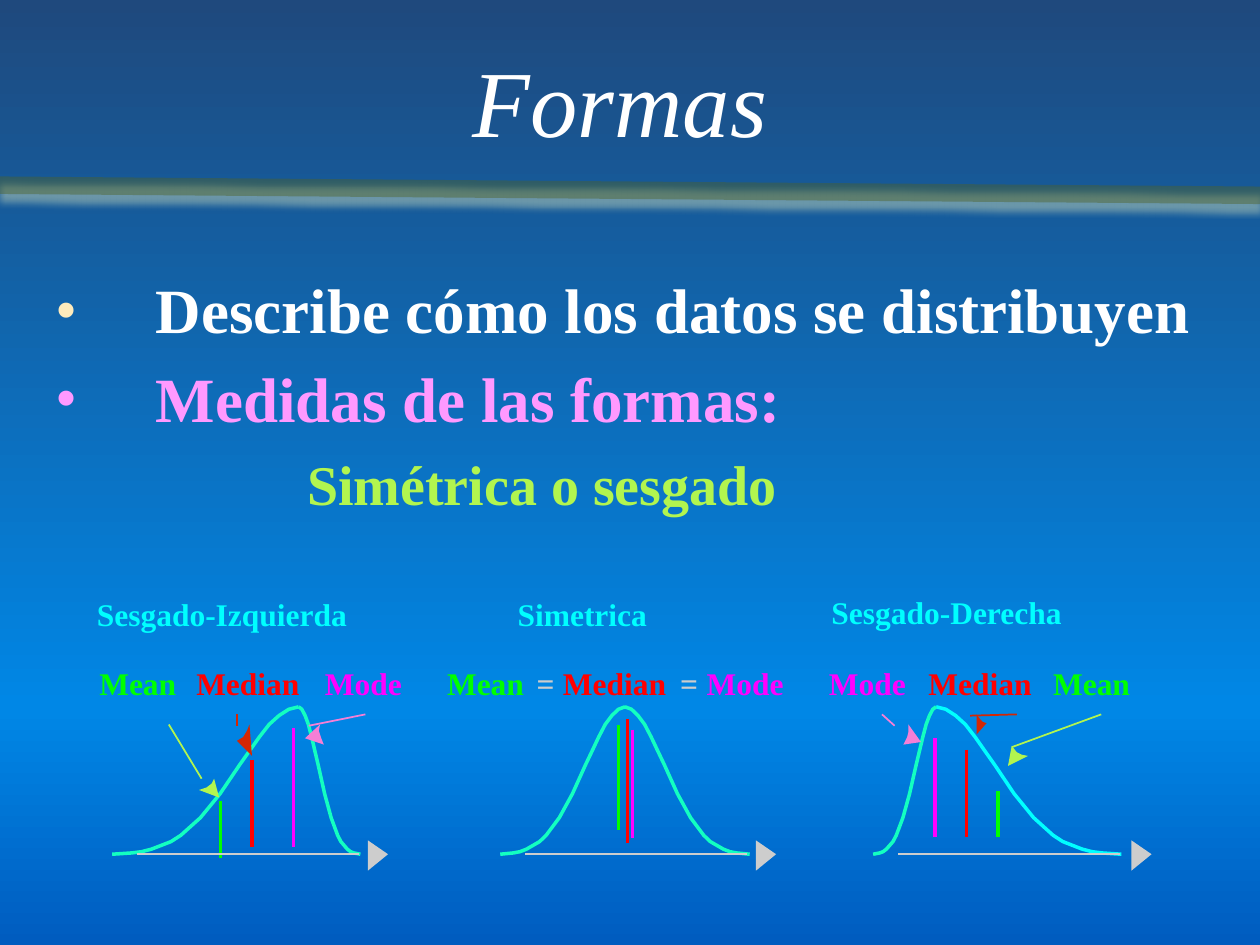
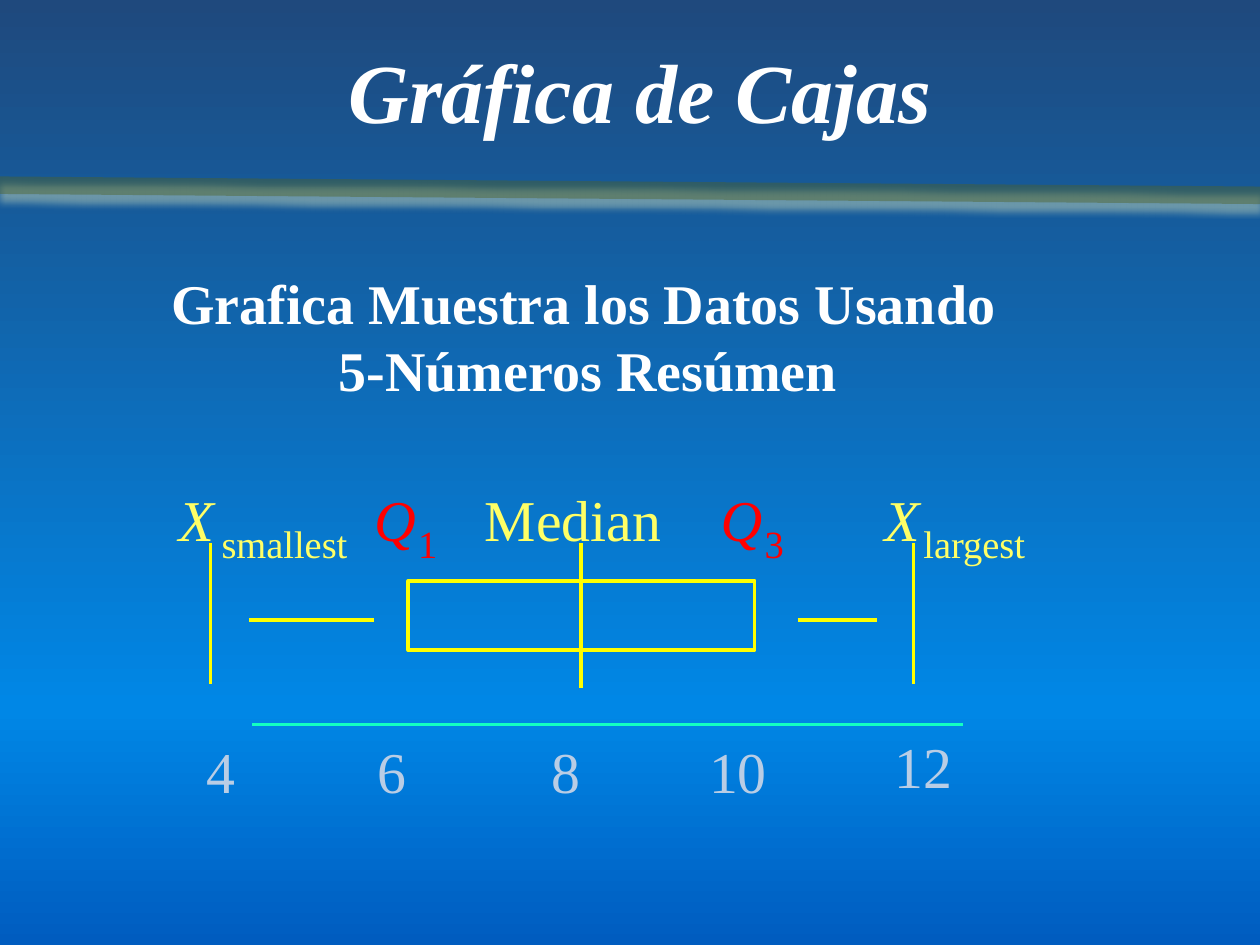
"""Builds two slides on distribution shapes and box plots."""
from lxml import etree
from pptx import Presentation
from pptx import util as u
from pptx.dml import color
from pptx.enum import shapes, text
from pptx.oxml import ns

INK = {
    "white": "FFFFFF", "cream": "FEEBBC", "pink": "FF99FF", "lime": "B2F54F",
    "aqua": "13FFC1", "cyan": "00FFFF", "grey": "CDCDCD", "green": "00FF00",
    "red": "FF0000", "mauve": "FF00FF", "rust": "D42704", "rose": "F57FD6",
    "yellow": "FFFF00", "lemon": "FFFF66", "pale": "B9CDE5",
    "band": "4F6228", "glow": "D7E4BD",
    "navy": "1F497D", "sky": "0087E6", "deep": "005CBF",
}
FONT = "Times New Roman"
WIDE = {"Mean": 0.84, "Median": 1.06, "Mode": 0.82, "=": 0.41}
HUE = {"Mean": "green", "Median": "red", "Mode": "mauve", "=": "grey"}
STEPS = (0, 2, 3, 4, 5, 6, 7, 9, 11, 13, 14, 15, 16, 17, 18, 19)
RISE = (6.78, 6.77, 6.76, 6.74, 6.71, 6.68, 6.63, 6.49,
        6.3, 6.07, 5.96, 5.85, 5.75, 5.68, 5.63, 5.61)


def rgb(name):
    return color.RGBColor.from_string(INK[name])


def node(root, tag, **atts):
    return etree.SubElement(root, ns.qn("a:" + tag),
                            {key: str(val) for key, val in atts.items()})


class Deck:
    def __init__(self):
        self.prs = Presentation()
        self.prs.slide_width = u.Inches(10)
        self.prs.slide_height = u.Inches(7.5)
        self.slide = None
        self.ground()

    def ground(self):
        fill = self.prs.slide_master.background.fill
        fill.gradient()
        fill.gradient_angle = 270
        root = self.prs.slide_master.element.find(".//" + ns.qn("a:gsLst"))
        for old in list(root):
            root.remove(old)
        for pos, name in ((0, "navy"), (75, "sky"), (100, "deep")):
            node(node(root, "gs", pos=pos * 1000), "srgbClr", val=INK[name])

    def page(self, title, left, top, size, bold=False):
        self.slide = self.prs.slides.add_slide(self.prs.slide_layouts[5])
        self.band()
        box = self.slide.shapes.title
        box.left, box.top = u.Inches(left), u.Inches(top)
        box.width, box.height = u.Inches(8.5), u.Inches(1.25)
        frame = box.text_frame
        frame.vertical_anchor = text.MSO_ANCHOR.MIDDLE
        para = frame.paragraphs[0]
        para.alignment = text.PP_ALIGN.CENTER
        para.line_spacing = 0.95
        self.run(para, title, size, "white", bold, True)

    def band(self):
        line = self.line((0, 1.47), (10, 1.55), "band", 10)
        paint = line.line._ln.find(".//" + ns.qn("a:srgbClr"))
        node(paint, "alpha", val=44000)
        glow = node(line._element.spPr.find(ns.qn("a:effectLst")), "outerShdw",
                    blurRad=u.Pt(4), dist=u.Pt(4), dir=5400000,
                    algn="ctr", rotWithShape=0)
        node(glow, "srgbClr", val=INK["glow"])

    def run(self, para, words, size, hue, bold=False, slant=False):
        run = para.add_run()
        run.text = words
        font = run.font
        font.name, font.size = FONT, u.Pt(size)
        font.bold, font.italic = bold, slant
        font.color.rgb = rgb(hue)

    def line(self, start, end, hue, width=2):
        ends = [u.Inches(val) for val in (*start, *end)]
        line = self.slide.shapes.add_connector(
            shapes.MSO_CONNECTOR.STRAIGHT, *ends)
        line.line.color.rgb = rgb(hue)
        line.line.width = u.Pt(width)
        node(line._element.spPr, "effectLst")
        return line

    def free(self, points, hue, solid=False):
        spots = [(u.Inches(x), u.Inches(y)) for x, y in points]
        pen = self.slide.shapes.build_freeform(*spots[0])
        pen.add_line_segments(spots[1:], close=solid)
        shape = pen.convert_to_shape()
        if solid:
            shape.shadow.inherit = False
            shape.fill.solid()
            shape.fill.fore_color.rgb = rgb(hue)
            shape.line.fill.background()
        else:
            self.hollow(shape, hue)

    def hollow(self, shape, hue):
        shape.shadow.inherit = False
        shape.fill.background()
        shape.line.color.rgb = rgb(hue)
        shape.line.width = u.Pt(2)

    def frame(self, left, top, width, height, hue):
        area = [u.Inches(val) for val in (left, top, width, height)]
        self.hollow(self.slide.shapes.add_shape(
            shapes.MSO_SHAPE.RECTANGLE, *area), hue)

    def label(self, words, left, top, width, size, hue, bold=False, slant=False):
        high = size * 0.0162 + 0.11
        box = self.slide.shapes.add_textbox(
            *[u.Inches(val) for val in (left, top, width, high)])
        box.text_frame.word_wrap = False
        box.text_frame.auto_size = text.MSO_AUTO_SIZE.SHAPE_TO_FIT_TEXT
        self.run(box.text_frame.paragraphs[0], words, size, hue, bold, slant)

    def body(self, area, rows):
        box = self.slide.shapes.add_textbox(*[u.Inches(val) for val in area])
        frame = box.text_frame
        frame.word_wrap = True
        for num, (words, size, hue, space, gap, inset, dot) in enumerate(rows):
            para = frame.add_paragraph() if num else frame.paragraphs[0]
            para.line_spacing = space
            para.space_before = u.Pt(0)
            props = para._p.get_or_add_pPr()
            before = props.find(ns.qn("a:spcBef"))
            before.remove(before[0])
            node(before, "spcPct", val=gap * 1000)
            props.set("marL", str(u.Inches(inset)))
            props.set("indent", str(-u.Inches(0.8) if dot else 0))
            if dot:
                node(node(props, "buClr"), "srgbClr", val=INK[dot])
                node(props, "buFont", typeface=FONT)
                node(props, "buChar", char="•")
            else:
                node(props, "buNone")
            self.run(para, words, size, hue, True)

    def curve(self, foot, peak, hue="aqua"):
        self.free([(foot + (peak - foot) * step / 19, y)
                   for step, y in zip(STEPS, RISE)], hue)

    def axis(self, left, tip):
        self.line((left, 6.78), (left + 1.76, 6.78), "grey", 1)
        self.free([(tip - 0.16, 6.67), (tip, 6.78), (tip - 0.16, 6.91)],
                  "grey", True)

    def arrow(self, start, end, head, hue):
        self.line(start, end, hue, 1)
        self.free(head, hue, True)


def forms(deck):
    deck.page("Formas", 0.67, 0.21, 54)
    deck.body((0.33, 2.17, 9.67, 2.17), (
        ("Describe cómo los datos se distribuyen", 36, "white", 0.9, 20, 0.81, "cream"),
        ("Medidas de las formas:", 36, "pink", 0.9, 33, 0.81, "pink"),
        ("Simétrica o sesgado", 32, "lime", 0.9, 36, 2.01, None)))

    for left, peak, right in ((0.89, 2.37, 2.86), (3.97, 4.96, 5.95),
                              (6.93, 7.43, 8.9)):
        deck.curve(right, peak, "cyan" if right == 8.9 else "aqua")
        deck.curve(left, peak)

    for words, left, top, width in (("Sesgado-Izquierda", 0.67, 4.67, 2.21),
                                    ("Simetrica", 4.01, 4.67, 1.24),
                                    ("Sesgado-Derecha", 6.5, 4.66, 2.05)):
        deck.label(words, left, top, width, 18, "cyan", True)

    for words, left in (("Mean", 0.69), ("Median", 1.46), ("Mode", 2.48),
                        ("Mean", 3.45), ("=", 4.16), ("Median", 4.37),
                        ("=", 5.3), ("Mode", 5.51),
                        ("Mode", 6.48), ("Median", 7.27), ("Mean", 8.26)):
        deck.label(words, left, 5.22, WIDE[words], 18, HUE[words], True)

    for name, x, top, low in (("Mode", 7.42, 5.86, 6.64), ("Median", 7.67, 5.95, 6.64),
                              ("Mean", 7.92, 6.28, 6.64), ("Mode", 2.33, 5.78, 6.72),
                              ("Median", 2, 6.03, 6.72), ("Mean", 1.75, 6.36, 6.81),
                              ("Median", 4.98, 5.71, 6.69), ("Mean", 4.91, 5.75, 6.59),
                              ("Mode", 5.02, 5.79, 6.65)):
        deck.line((x, top), (x, low), HUE[name])

    for arrow in (
            ((8.74, 5.67), (8.03, 5.93),
             ((8.16, 6), (8, 6.08), (8.03, 5.92), (8.07, 5.97), (8.11, 5.99)), "lime"),
            ((8.07, 5.67), (7.7, 5.68),
             ((7.83, 5.74), (7.75, 5.83), (7.75, 5.67), (7.78, 5.71), (7.8, 5.73)), "rust"),
            ((1.88, 5.67), (1.88, 5.76),
             ((1.98, 5.75), (2, 6), (1.88, 5.88), (1.93, 5.85), (1.96, 5.8)), "rust"),
            ((1.34, 5.75), (1.6, 6.18),
             ((1.7, 6.18), (1.74, 6.33), (1.58, 6.27), (1.64, 6.25), (1.68, 6.22)), "lime"),
            ((7, 5.67), (7.1, 5.76),
             ((7.21, 5.75), (7.31, 5.89), (7.17, 5.91), (7.2, 5.85), (7.21, 5.81)), "rose"),
            ((2.9, 5.67), (2.45, 5.76),
             ((2.57, 5.91), (2.42, 5.86), (2.54, 5.75), (2.53, 5.8), (2.55, 5.86)), "rose")):
        deck.arrow(*arrow)

    for left, tip in ((4.17, 6.16), (7.13, 9.14), (1.09, 3.08)):
        deck.axis(left, tip)


def boxes(deck):
    deck.page("Gráfica de Cajas", 0.83, 0.13, 48, True)
    deck.body((0.58, 2.08, 8, 4.5), (
        ("Grafica Muestra los Datos Usando", 32, "white", 1.0, 20, 0.68, None),
        ("5-Números Resúmen", 32, "white", 1.0, 0, 2.01, None)))

    deck.frame(3.24, 4.61, 2.75, 0.55, "yellow")
    for x, low in ((1.67, 5.43), (4.61, 5.46), (7.25, 5.43)):
        deck.line((x, 4.31), (x, low), "yellow")
    for left, right in ((1.98, 2.97), (6.33, 6.96)):
        deck.line((left, 4.92), (right, 4.92), "yellow")
    deck.line((2, 5.75), (7.64, 5.75), "aqua")

    deck.label("Median", 3.75, 3.79, 1.61, 33, "lemon")
    for big, left, wide, small, shift, span, hue in (
            ("X", 1.32, 0.48, "smallest", 0.34, 1.21, "lemon"),
            ("Q", 2.87, 0.55, "1", 0.35, 0.35, "red"),
            ("Q", 5.62, 0.55, "3", 0.35, 0.35, "red"),
            ("X", 6.92, 0.48, "largest", 0.31, 1.02, "lemon")):
        deck.label(big, left, 3.79, wide, 33, hue, slant=True)
        deck.label(small, left + shift, 4.08, span, 22, hue)

    for mark, left, top in (("4", 1.54, 5.79), ("6", 2.9, 5.79), ("8", 4.28, 5.79),
                            ("10", 5.53, 5.79), ("12", 7, 5.75)):
        deck.label(mark, left, top, 0.2 + 0.23 * len(mark), 33, "pale")


def main():
    deck = Deck()
    forms(deck)
    boxes(deck)
    deck.prs.save("out.pptx")


if __name__ == "__main__":
    main()
